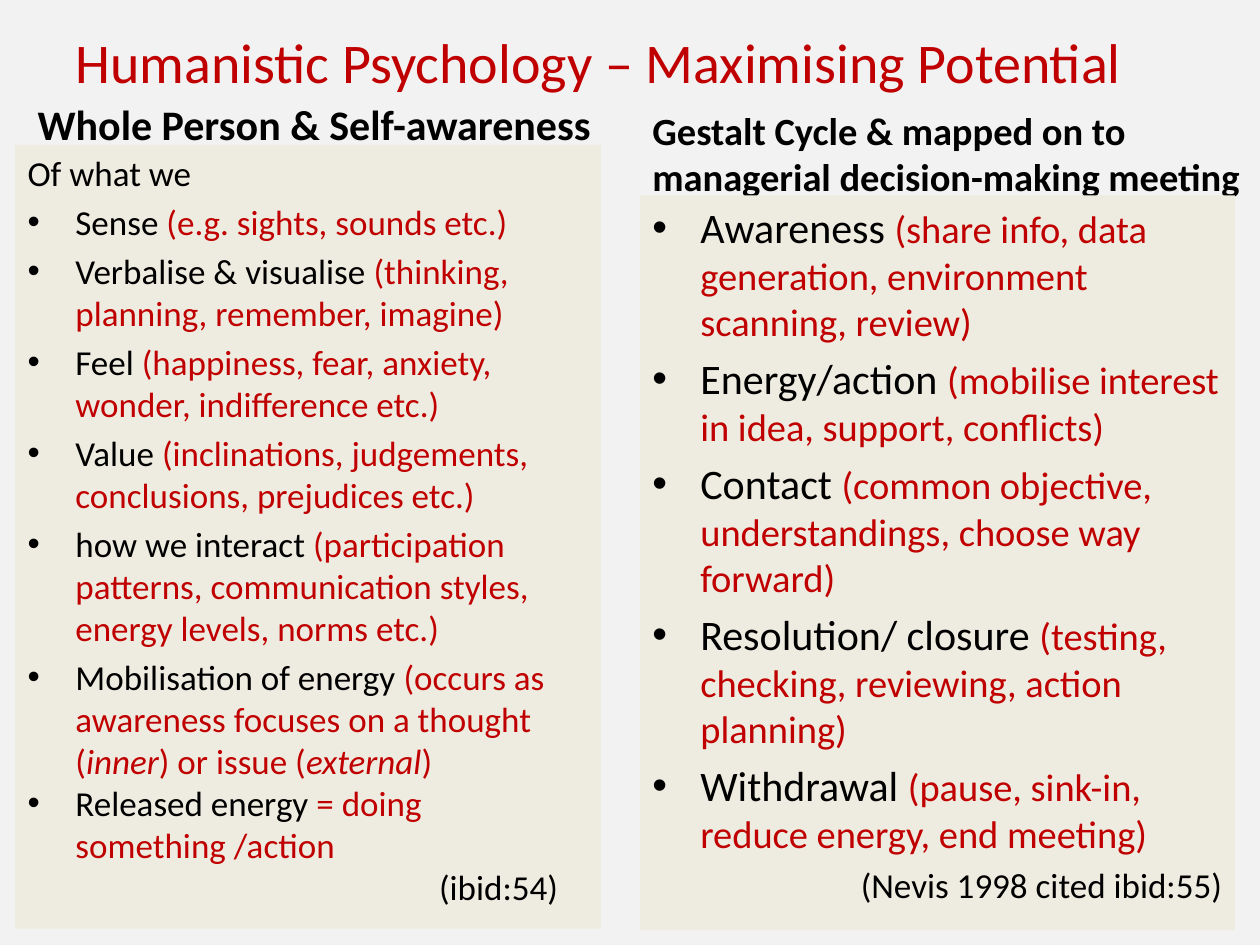
from dataclasses import dataclass

from lxml import etree
from pptx import Presentation, util as u
from pptx.dml.color import RGBColor
from pptx.enum import shapes, text
from pptx.oxml import ns


@dataclass(frozen=True)
class Theme:
    font: str = "Calibri"
    backdrop: str = "F2F2F2"
    panel: str = "EEECE1"
    ink: str = "000000"
    accent: str = "C00000"
    title: int = 32
    heading: int = 24
    small_heading: int = 22
    body: int = 20
    stage: int = 24
    stage_detail: int = 22
    spacing: float = 0.2
    indent: float = 0.38


THEME = Theme()

AWARENESS = [
    ("Sense ", "(e.g. sights, sounds etc.)"),
    ("Verbalise & visualise ", "(thinking, planning, remember, imagine)"),
    ("Feel ", "(happiness, fear, anxiety, wonder, indifference etc.)"),
    ("Value ", "(inclinations, judgements, conclusions, prejudices etc.)"),
    ("how we interact ", "(participation patterns, communication styles, energy levels, norms etc.)"),
    ("Mobilisation of energy ", "(occurs as awareness focuses on a thought (",
     "inner", ") or issue (", "external", ")"),
    ("Released energy ", "= doing something /action"),
]
GESTALT_CYCLE = [
    ("Awareness ", "(share info, data generation, environment scanning, review)"),
    ("Energy/action ", "(mobilise interest in idea, support, conflicts)"),
    ("Contact ", "(common objective, understandings, choose way forward)"),
    ("Resolution/ closure ", "(testing, checking, reviewing, action planning)"),
    ("Withdrawal ", "(pause, sink-in, reduce energy, end meeting)"),
]


def apply_format(target, values):
    for name, value in values.items():
        setattr(target, name, value)


def add_run(paragraph, words, size, color, **style):
    run = paragraph.add_run()
    run.text = words
    apply_format(run.font, {"name": THEME.font, "size": u.Pt(size), **style})
    run.font.color.rgb = RGBColor.from_string(color)


def next_paragraph(frame, size, spaced=True):
    first = frame.paragraphs[0]
    paragraph = frame.add_paragraph() if first.runs else first
    gap = size * THEME.spacing if spaced else 0
    apply_format(paragraph, {"space_before": u.Pt(gap), "alignment": text.PP_ALIGN.LEFT})
    return paragraph


def add_heading(slide, box, words, size, color, anchor, bold):
    heading = slide.shapes.add_textbox(*map(u.Inches, box))
    frame = heading.text_frame
    apply_format(frame, {"word_wrap": True, "vertical_anchor": anchor})
    add_run(next_paragraph(frame, size), words, size, color, bold=bold)


def add_panel(slide, box, right_inset):
    panel = slide.shapes.add_shape(shapes.MSO_SHAPE.RECTANGLE, *map(u.Inches, box))
    panel.shadow.inherit = False
    panel.fill.solid()
    panel.fill.fore_color.rgb = RGBColor.from_string(THEME.panel)
    panel.line.fill.background()
    frame = panel.text_frame
    apply_format(frame, {
        "word_wrap": True,
        "vertical_anchor": text.MSO_ANCHOR.TOP,
        "margin_right": u.Inches(right_inset),
    })
    return frame


def add_bullet(frame, item, size, detail_size, spaced=True):
    paragraph = next_paragraph(frame, size, spaced)
    properties = paragraph._p.get_or_add_pPr()
    indent = u.Inches(THEME.indent)
    properties.set("marL", str(indent))
    properties.set("indent", str(-indent))
    etree.SubElement(properties, ns.qn("a:buFont"), typeface="Arial")
    etree.SubElement(properties, ns.qn("a:buChar"), char="•")
    term, *details = item
    add_run(paragraph, term, size, THEME.ink)
    for position, detail in enumerate(details):
        add_run(paragraph, detail, detail_size, THEME.accent, italic=position % 2 == 1)


def add_citation(frame, words, spaced):
    citation = next_paragraph(frame, THEME.body, spaced)
    citation.alignment = text.PP_ALIGN.RIGHT
    add_run(citation, words, THEME.body, THEME.ink)


def add_awareness(slide):
    add_heading(slide, (0.2, 0.76, 4.65, 0.47), "Whole Person & Self-awareness",
                THEME.heading, THEME.ink, text.MSO_ANCHOR.BOTTOM, True)
    panel = add_panel(slide, (0.12, 1.15, 4.65, 6.22), 0.34)
    add_run(next_paragraph(panel, THEME.body), "Of what we", THEME.body, THEME.ink)
    for item in AWARENESS:
        add_bullet(panel, item, THEME.body, THEME.body, item is not AWARENESS[-1])
    add_citation(panel, "(ibid:54)", False)


def add_gestalt_cycle(slide):
    add_heading(slide, (5.08, 0.76, 4.88, 0.87),
                "Gestalt Cycle & mapped on to managerial decision-making meeting",
                THEME.small_heading, THEME.ink, text.MSO_ANCHOR.BOTTOM, True)
    panel = add_panel(slide, (5.08, 1.55, 4.72, 5.83), 0.1)
    for stage in GESTALT_CYCLE:
        add_bullet(panel, stage, THEME.stage, THEME.stage_detail)
    add_citation(panel, "(Nevis 1998 cited ibid:55)", True)


def main():
    deck = Presentation()
    apply_format(deck, {"slide_width": u.Inches(10), "slide_height": u.Inches(7.5)})
    slide = deck.slides.add_slide(deck.slide_layouts[6])
    slide.background.fill.solid()
    slide.background.fill.fore_color.rgb = RGBColor.from_string(THEME.backdrop)
    add_heading(slide, (0.5, 0.13, 9, 0.71), "Humanistic Psychology – Maximising Potential",
                THEME.title, THEME.accent, text.MSO_ANCHOR.MIDDLE, False)
    add_awareness(slide)
    add_gestalt_cycle(slide)
    deck.save("out.pptx")


if __name__ == "__main__":
    main()
